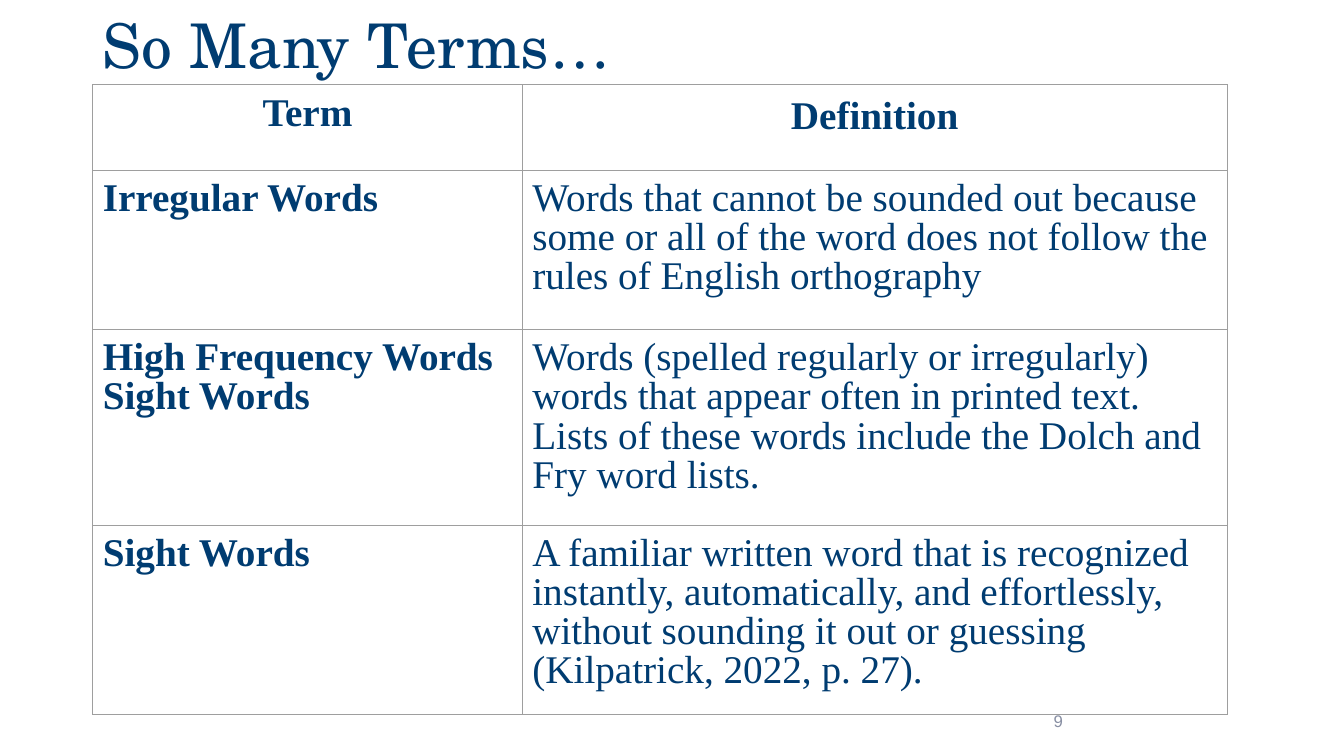
from lxml.etree import SubElement
from pptx import Presentation
from pptx.dml.color import RGBColor
from pptx.enum.text import MSO_ANCHOR as Anchor, PP_ALIGN as Align
from pptx.oxml.ns import qn
from pptx.util import Inches, Pt

NAVY = RGBColor(0x00, 0x3C, 0x71)
SLATE = RGBColor(0x88, 0x8F, 0xA3)
RULE = RGBColor(0x9E, 0x9E, 0x9E)

COLUMN_WIDTHS = [4.26, 6.99]
ROW_HEIGHTS = [0.85, 1.58, 1.94, 1.75]
ROWS = [
    ("Term", "Definition"),
    ("Irregular Words",
     "Words that cannot be sounded out because some or all of the word "
     "does not follow the rules of English orthography"),
    ("High Frequency Words\nSight Words",
     "Words (spelled regularly or irregularly) words that appear often in "
     "printed text. Lists of these words include the Dolch and Fry word lists."),
    ("Sight Words",
     "A familiar written word that is recognized instantly, automatically, "
     "and effortlessly, without sounding it out or guessing "
     "(Kilpatrick, 2022, p. 27)."),
]


def style_text(para, font_name, size, color, bold=False):
    for span in para.runs:
        span.font.name = font_name
        span.font.size = Pt(size)
        span.font.color.rgb = color
        span.font.bold = bold


def add_borders(cell):
    properties = cell._tc.get_or_add_tcPr()
    for position, side in enumerate(("a:lnL", "a:lnR", "a:lnT", "a:lnB")):
        line = SubElement(properties, qn(side), w=str(Pt(0.75)))
        fill = SubElement(line, qn("a:solidFill"))
        SubElement(fill, qn("a:srgbClr"), val=str(RULE))
        properties.insert(position, line)


deck = Presentation()
deck.slide_width = Inches(13.33)
deck.slide_height = Inches(7.5)
page = deck.slides.add_slide(deck.slide_layouts.get_by_name("Title Only"))

title = page.shapes.title
title.left, title.top = Inches(0.92), Inches(-0.24)
title.width, title.height = Inches(11.5), Inches(1.45)
title.text_frame.text = "So Many Terms…"
title.text_frame.vertical_anchor = Anchor.MIDDLE
para = title.text_frame.paragraphs[0]
para.alignment = Align.LEFT
para.line_spacing = 0.9
style_text(para, "TeX Gyre Schola", 44, NAVY)

box = page.shapes.add_textbox(Inches(9.42), Inches(6.95), Inches(1.22), Inches(0.4))
box.text_frame.word_wrap = True
box.text_frame.vertical_anchor = Anchor.MIDDLE
box.text_frame.text = "9"
para = box.text_frame.paragraphs[0]
para.alignment = Align.RIGHT
style_text(para, "Arial", 12, SLATE)

frame = page.shapes.add_table(
    len(ROWS), len(COLUMN_WIDTHS), Inches(0.92), Inches(0.84),
    Inches(sum(COLUMN_WIDTHS)), Inches(sum(ROW_HEIGHTS)))
table = frame.table
table.first_row = False
table.horz_banding = False
for column, width in zip(table.columns, COLUMN_WIDTHS):
    column.width = Inches(width)

for row_index, (row, height) in enumerate(zip(table.rows, ROW_HEIGHTS)):
    row.height = Inches(height)
    for column_index, cell in enumerate(row.cells):
        is_header = row_index == 0
        is_term = column_index == 0
        cell.text_frame.text = ROWS[row_index][column_index]
        cell.margin_left = cell.margin_right = Inches(0.1)
        cell.margin_top = cell.margin_bottom = Inches(0.1)
        cell.vertical_anchor = Anchor.TOP
        cell.fill.background()
        add_borders(cell)
        for para in cell.text_frame.paragraphs:
            para.alignment = Align.CENTER if is_header else Align.LEFT
            para.line_spacing = 1.0 if is_header and not is_term else 0.9
            style_text(para, "Times New Roman", 28, NAVY, is_header or is_term)

deck.save("out.pptx")
